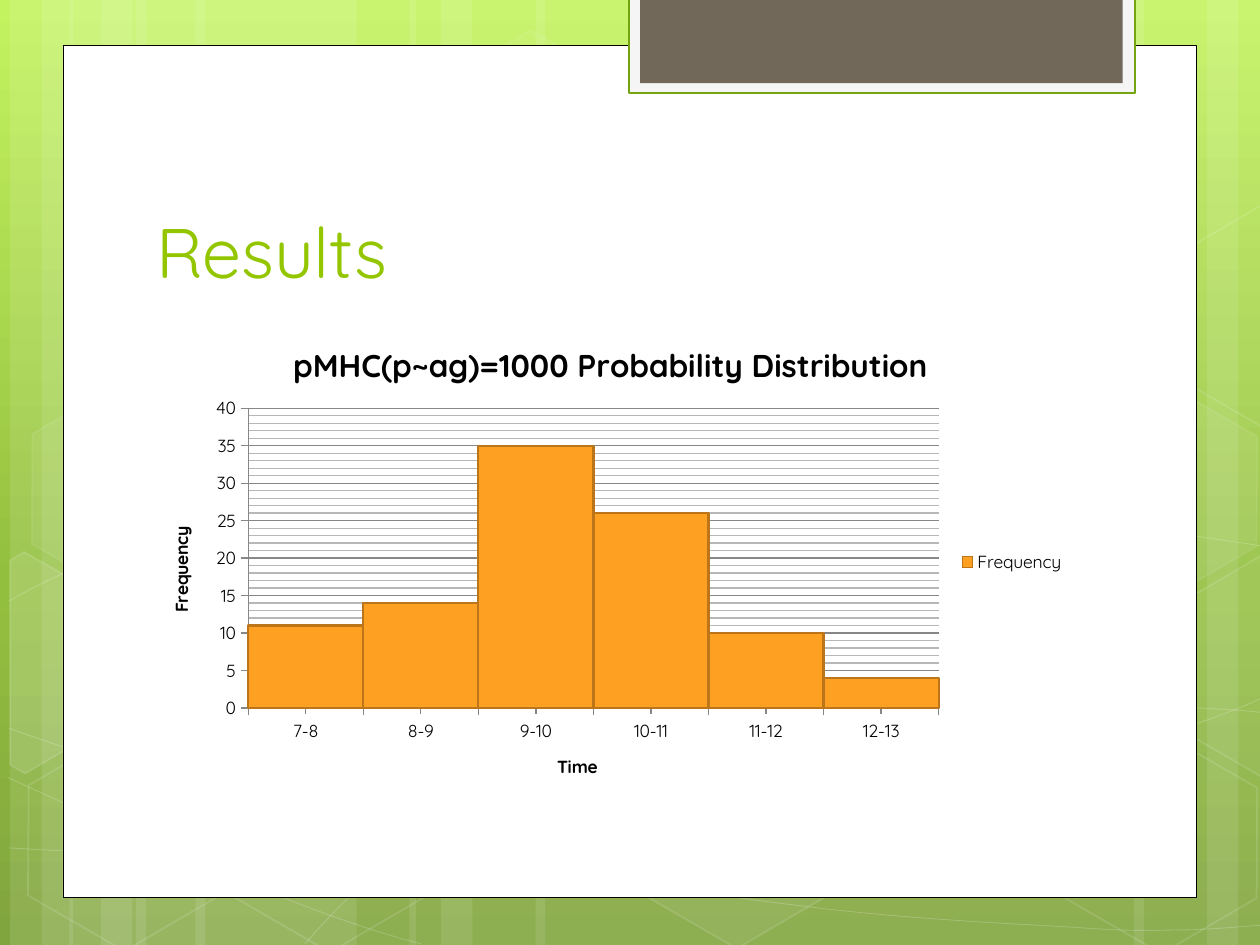
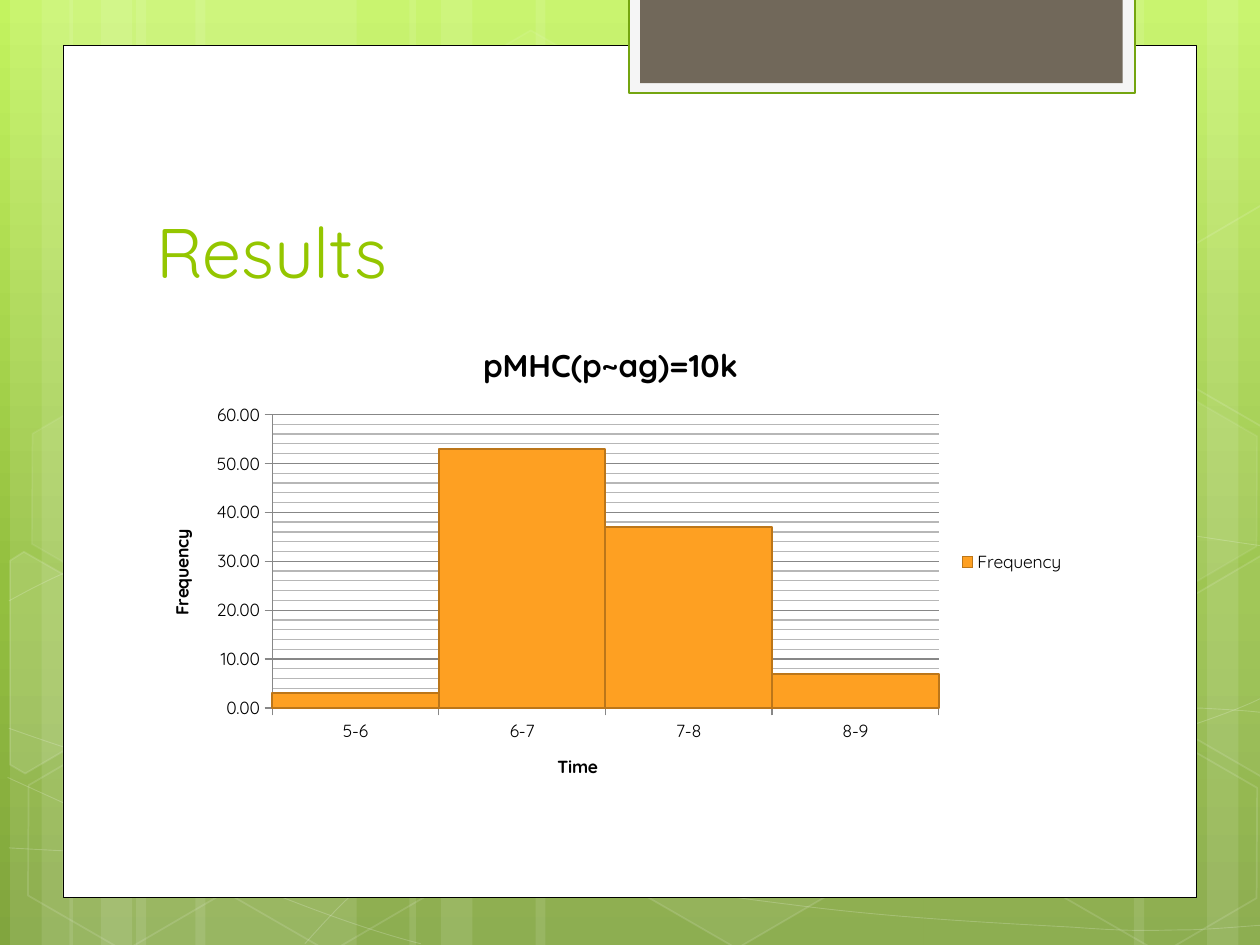
import pptx
import pptx.util
import pptx.oxml
import pptx.oxml.ns
import pptx.chart.data
import pptx.dml.color
import pptx.enum.chart
import pptx.enum.shapes
import pptx.enum.text
from lxml import etree

inch = pptx.util.Inches
point = pptx.util.Pt
qn = pptx.oxml.ns.qn
KINDS = pptx.enum.shapes.MSO_SHAPE
TICKS = pptx.enum.chart.XL_TICK_MARK

WIDE, HIGH = 10, 7.5
FONT = "Quicksand"
COLORS = {
    "white": "FFFFFF", "black": "000000", "title": "94C600",
    "tab": "F5F5F5", "edge": "74A510", "brown": "71685A",
    "bar": "FEA022", "rim": "BC7619",
}
SKY = [(0, "C3F35F"), (62, "93BF3F"), (100, "81A53E")]
CHART = (1.14, 2.54, 7.41, 3.84)

# Pale bands: left and width
BANDS = [
    (1.08, 1.75), (0.08, 0.5), (0.33, 0.83), (1.55, 1.75),
    (0.55, 0.5), (0.8, 0.83), (7.33, 1.75), (9.58, 0.5),
    (9, 0.83), (4.25, 3.08), (3.25, 0.5), (3.5, 0.83),
]

# Thin waves: a start, then two handles and an end for each bend
WAVES = [
    [(0.07, 6.73), (0.61, 6.76), (1.15, 6.79), (1.9, 6.78),
     (2.65, 6.77), (3.58, 6.75), (4.58, 6.65),
     (5.58, 6.55), (7, 6.36), (7.92, 6.17),
     (8.83, 5.98), (9.77, 5.68), (10.07, 5.51)],
    [(0.07, 4.77), (0.36, 4.61), (0.65, 4.46), (1.21, 4.31),
     (1.78, 4.16), (2.59, 3.94), (3.47, 3.87),
     (4.36, 3.8), (5.44, 3.79), (6.54, 3.87),
     (7.64, 3.95), (9.47, 4.26), (10.07, 4.34)],
    [(0.06, 6.17), (1.27, 6.72), (2.47, 7.27), (3.34, 7.49)],
    [(0.07, 5.78), (0.38, 5.89), (0.7, 6), (1.28, 6.16),
     (1.86, 6.31), (2.73, 6.56), (3.57, 6.73),
     (4.4, 6.9), (5.45, 7.08), (6.28, 7.18),
     (7.11, 7.29), (8, 7.33), (8.53, 7.36),
     (9.05, 7.4), (9.19, 7.38), (9.45, 7.38),
     (9.71, 7.37), (9.89, 7.35), (10.07, 7.34)],
    [(2.42, 7.49), (2.6, 7.29), (2.78, 7.09), (3.02, 6.91),
     (3.26, 6.73), (3.6, 6.53), (3.88, 6.39),
     (4.16, 6.25), (4.33, 6.19), (4.7, 6.09),
     (5.06, 5.99), (5.73, 5.85), (6.08, 5.78),
     (6.44, 5.71), (6.49, 5.71), (6.8, 5.69),
     (7.11, 5.66), (7.6, 5.63), (7.94, 5.62),
     (8.29, 5.61), (8.86, 5.62), (8.86, 5.62),
     (9.08, 5.62), (9.31, 5.62), (9.53, 5.62),
     (9.71, 5.63), (9.88, 5.64), (9.97, 5.65),
     (10.06, 5.66), (10.03, 5.65), (10.06, 5.66)],
]

# Hexagons: left, top, fill opacity, line opacity
CELLS = [
    (3.34, 0.36, 4, 8), (4.97, 5.89, 6, 12), (0.11, 5.91, None, 12),
    (0.14, 3.12, 7, 8), (1.74, 5.92, None, 12),
    (8.34, 5.93, None, 12), (8.34, 3.14, 7, 8),
]

# Hexagons cut by the slide's edge: corners, fill opacity
CUTS = [
    ([(0.08, 4.45), (0.19, 4.38), (0.96, 4.82), (0.95, 5.7),
      (0.2, 6.14), (0.08, 6.07)], 10),
    ([(9.26, 4.85), (10.01, 4.41), (10.09, 4.46), (10.09, 6.13),
      (10.02, 6.17), (9.26, 5.73)], 4),
    ([(9.26, 2.07), (10.01, 1.63), (10.1, 1.68), (10.09, 3.35),
      (10.02, 3.39), (9.26, 2.95)], None),
]


def rgb(name):
    return pptx.dml.color.RGBColor.from_string(COLORS[name])


def fade(node, share):
    """Make the solid colour inside node partly clear."""
    tint = node.find(qn("a:solidFill")).find(qn("a:srgbClr"))
    etree.SubElement(tint, qn("a:alpha")).set("val", str(share * 1000))


def paint(shape, fill=None, line=None, width=1, clear=None, haze=None):
    shape.shadow.inherit = False
    props = shape.element.spPr
    if fill:
        shape.fill.solid()
        shape.fill.fore_color.rgb = rgb(fill)
        if clear:
            fade(props, clear)
    else:
        shape.fill.background()
    if line:
        shape.line.color.rgb = rgb(line)
        shape.line.width = point(width)
        if haze:
            fade(props.find(qn("a:ln")), haze)
    else:
        shape.line.fill.background()


def block(slide, box, kind=KINDS.RECTANGLE, **look):
    shape = slide.shapes.add_shape(kind, *map(inch, box))
    paint(shape, **look)
    return shape


def trace(slide, spots, close, **look):
    spots = [(inch(x), inch(y)) for x, y in spots]
    maker = slide.shapes.build_freeform(*spots[0])
    maker.add_line_segments(spots[1:], close=close)
    shape = maker.convert_to_shape()
    paint(shape, line="white", **look)
    return shape


def wave(slide, knots):
    """Trace the ends of the bends, then turn each line into a curve."""
    shape = trace(slide, knots[::3], False, width=0.5, haze=20)
    lines = list(shape.element.iter(qn("a:lnTo")))
    for n, line in enumerate(lines):
        curve = etree.Element(qn("a:cubicBezTo"))
        for x, y in knots[3 * n + 1:3 * n + 4]:
            etree.SubElement(curve, qn("a:pt"), x=str(inch(x) - shape.left),
                             y=str(inch(y) - shape.top))
        line.getparent().replace(line, curve)


def shade(layout):
    fill = layout.background.fill
    fill.gradient()
    fill.gradient_angle = 270
    stops = layout.element.find(".//" + qn("a:gsLst"))
    for stop in list(stops):
        stops.remove(stop)
    for place, tint in SKY:
        stop = etree.SubElement(stops, qn("a:gs"), pos=str(place * 1000))
        etree.SubElement(stop, qn("a:srgbClr"), val=tint)


def frame(slide):
    """Backdrop, white panel and top tab, kept on the slide's layout."""
    layout = slide.slide_layout
    for holder in list(layout.placeholders):
        holder.element.getparent().remove(holder.element)
    shade(layout)
    for left, width in BANDS:
        block(slide, (left, 0, width, HIGH), fill="white", clear=10)
    for knots in WAVES:
        wave(slide, knots)
    for left, top, clear, haze in CELLS:
        cell = block(slide, (left, top, 1.75, 1.52), KINDS.HEXAGON,
                     fill="white" if clear else None, clear=clear,
                     line="white", haze=haze)
        cell.adjustments[0] = 0.285
        cell.rotation = 30
    for spots, clear in CUTS:
        trace(slide, spots, True, fill="white" if clear else None,
              clear=clear, haze=12)
    block(slide, (0.5, 0.36, 9, 6.76), fill="white", line="black", width=0.5)
    block(slide, (4.99, -0.02, 4.02, 0.76), fill="tab", line="edge",
          width=1.25)
    block(slide, (5.08, -0.02, 3.83, 0.68), fill="brown")
    for shape in list(slide.shapes):
        layout.shapes.element.append(shape.element)


def style(font, size, color, bold=False):
    font.name = FONT
    font.size = point(size)
    font.bold = bold
    font.color.rgb = rgb(color)


def write(text, words, size, color, bold=False):
    text.text = words
    for run in text.paragraphs[0].runs:
        style(run.font, size, color, bold)


def head(slide, words):
    text = slide.shapes.add_textbox(
        *map(inch, (1.14, 1.12, 7.68, 1.25))).text_frame
    text.word_wrap = True
    text.vertical_anchor = pptx.enum.text.MSO_ANCHOR.BOTTOM
    write(text, words, 40, "title")


def place(chart, box):
    """Set the plot's inner box, given in inches on the slide."""
    area = chart.element.find(".//" + qn("c:plotArea"))
    old = area.find(qn("c:layout"))
    if old is not None:
        area.remove(old)
    layout = etree.Element(qn("c:layout"))
    area.insert(0, layout)
    inner = etree.SubElement(layout, qn("c:manualLayout"))
    left, top, width, height = box
    shares = {"x": (left - CHART[0]) / CHART[2],
              "y": (top - CHART[1]) / CHART[3],
              "w": width / CHART[2], "h": height / CHART[3]}
    rules = {"layoutTarget": "inner", "xMode": "edge", "yMode": "edge"}
    for key, val in {**rules, **shares}.items():
        etree.SubElement(inner, qn("c:" + key)).set("val", str(val))


def graph(slide, title, bins, counts, top, step, form, half, box):
    """Histogram: columns that touch, with fine grid lines."""
    data = pptx.chart.data.CategoryChartData()
    data.categories = bins
    data.add_series("Frequency", counts)
    chart = slide.shapes.add_chart(
        pptx.enum.chart.XL_CHART_TYPE.COLUMN_CLUSTERED,
        *map(inch, CHART), data).chart
    style(chart.font, 10, "black")
    chart.has_title = True
    write(chart.chart_title.text_frame, title, 18, "black", True)
    chart.has_legend = True
    chart.legend.position = pptx.enum.chart.XL_LEGEND_POSITION.RIGHT
    chart.legend.include_in_layout = False
    place(chart, box)

    # Columns
    plot = chart.plots[0]
    plot.gap_width = 0
    plot.vary_by_categories = False
    look = plot.series[0].format
    look.fill.solid()
    look.fill.fore_color.rgb = rgb("bar")
    look.line.color.rgb = rgb("rim")
    look.line.width = point(1.25)

    # Axes
    across, up = chart.category_axis, chart.value_axis
    for axis, name in ((across, "Time"), (up, "Frequency")):
        write(axis.axis_title.text_frame, name, 10, "black", True)
        axis.major_tick_mark = TICKS.OUTSIDE
        axis.minor_tick_mark = TICKS.NONE
    if half:
        across.minor_tick_mark = TICKS.OUTSIDE
    up.minimum_scale, up.maximum_scale = 0, top
    up.major_unit, up.minor_unit = step, step / 5
    up.has_major_gridlines = up.has_minor_gridlines = True
    up.tick_labels.number_format = form
    up.tick_labels.number_format_is_linked = False


def main():
    deck = pptx.Presentation()
    deck.slide_width, deck.slide_height = inch(WIDE), inch(HIGH)
    graphs = [
        ("pMHC(p~ag)=1000 Probability Distribution",
         ["7-8", "8-9", "9-10", "10-11", "11-12", "12-13"],
         [11, 14, 35, 26, 10, 4], 40, 5, "General", True,
         (1.97, 3.24, 5.48, 2.38)),
        ("pMHC(p~ag)=10k", ["5-6", "6-7", "7-8", "8-9"],
         [3, 53, 37, 7], 60, 10, "0.00", False, (2.16, 3.29, 5.29, 2.33)),
    ]
    slides = [deck.slides.add_slide(deck.slide_layouts[6]) for _ in graphs]
    frame(slides[0])
    for slide, parts in zip(slides, graphs):
        head(slide, "Results")
        graph(slide, *parts)
    deck.save("out.pptx")


if __name__ == "__main__":
    main()
